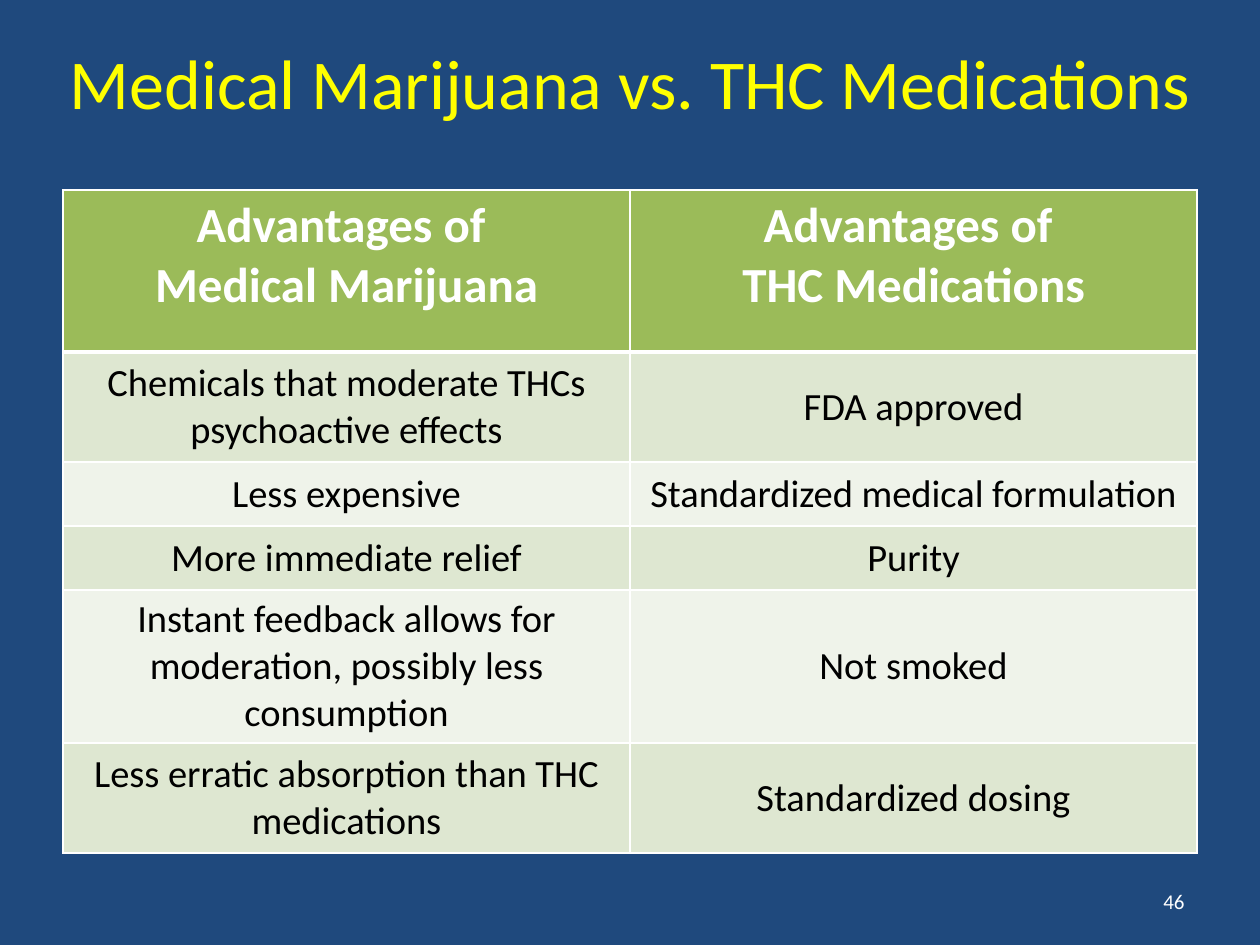
from dataclasses import dataclass

from lxml.etree import SubElement
from pptx import Presentation
from pptx.dml.color import RGBColor
from pptx.enum.text import MSO_ANCHOR, PP_ALIGN
from pptx.oxml.ns import qn
from pptx.slide import Slide
from pptx.table import Table, _Cell
from pptx.text.text import TextFrame
from pptx.util import Emu, Pt

PX_PER_INCH = 126
FONT = "Calibri"

NAVY = RGBColor(0x1F, 0x49, 0x7D)
YELLOW = RGBColor(0xFF, 0xFF, 0x00)
WHITE = RGBColor(0xFF, 0xFF, 0xFF)
BLACK = RGBColor(0x00, 0x00, 0x00)
GREEN = RGBColor(0x9B, 0xBB, 0x59)
BAND_DARK = RGBColor(0xDE, 0xE7, 0xD1)
BAND_LIGHT = RGBColor(0xEF, 0xF3, 0xEA)


@dataclass(frozen=True)
class TextStyle:
    size: int
    color: RGBColor
    align: PP_ALIGN = PP_ALIGN.CENTER
    anchor: MSO_ANCHOR = MSO_ANCHOR.MIDDLE
    bold: bool = False


@dataclass(frozen=True)
class Label:
    text: str
    left: int
    top: int
    width: int
    height: int
    style: TextStyle


@dataclass(frozen=True)
class Row:
    height: int
    marijuana: str
    medication: str


HEADER_STYLE = TextStyle(28, WHITE, anchor=MSO_ANCHOR.TOP, bold=True)
BODY_STYLE = TextStyle(22, BLACK)

LABELS = [
    Label("Medical Marijuana vs. THC Medications", 0, 3, 1260, 157,
          TextStyle(40, YELLOW)),
    Label("46", 903, 876, 294, 50, TextStyle(12, WHITE, PP_ALIGN.RIGHT)),
]

ROWS = [
    Row(162, "Advantages of \nMedical Marijuana", "Advantages of \nTHC Medications"),
    Row(110, "Chemicals that moderate THCs psychoactive effects", "FDA approved"),
    Row(64, "Less expensive", "Standardized medical formulation"),
    Row(64, "More immediate relief", "Purity"),
    Row(153, "Instant feedback allows for moderation, possibly less consumption",
        "Not smoked"),
    Row(110, "Less erratic absorption than THC medications", "Standardized dosing"),
]


def px(length: int) -> Emu:
    return Emu(round(length * 914400 / PX_PER_INCH))


def write_text(frame: TextFrame, text: str, style: TextStyle) -> None:
    frame.text = text
    for paragraph in frame.paragraphs:
        paragraph.alignment = style.align
        paragraph.font.name = FONT
        paragraph.font.size = Pt(style.size)
        paragraph.font.bold = style.bold
        paragraph.font.color.rgb = style.color


def add_label(page: Slide, label: Label) -> None:
    box = page.shapes.add_textbox(
        px(label.left), px(label.top), px(label.width), px(label.height))
    frame = box.text_frame
    frame.word_wrap = True
    frame.vertical_anchor = label.style.anchor
    write_text(frame, label.text, label.style)


def set_borders(cell: _Cell, top: int, bottom: int) -> None:
    """Draw white borders, 1 pt at the sides; must precede the cell's fill."""
    properties = cell._tc.get_or_add_tcPr()
    for side, width in (("L", 1), ("R", 1), ("T", top), ("B", bottom)):
        line = SubElement(properties, qn(f"a:ln{side}"), w=str(Pt(width)))
        fill = SubElement(line, qn("a:solidFill"))
        SubElement(fill, qn("a:srgbClr"), val=str(WHITE))


def fill_row(table: Table, index: int, row: Row) -> None:
    is_header = index == 0
    style = HEADER_STYLE if is_header else BODY_STYLE
    band = BAND_DARK if index % 2 else BAND_LIGHT
    table.rows[index].height = px(row.height)
    for column, text in enumerate((row.marijuana, row.medication)):
        cell = table.cell(index, column)
        set_borders(cell, top=3 if index == 1 else 1, bottom=3 if is_header else 1)
        cell.fill.solid()
        cell.fill.fore_color.rgb = GREEN if is_header else band
        cell.vertical_anchor = style.anchor
        write_text(cell.text_frame, text, style)


def add_comparison(page: Slide, rows: list[Row]) -> None:
    height = sum(row.height for row in rows)
    frame = page.shapes.add_table(
        len(rows), 2, px(63), px(190), px(1134), px(height))
    for index, row in enumerate(rows):
        fill_row(frame.table, index, row)


def main() -> None:
    deck = Presentation()
    deck.slide_width, deck.slide_height = px(1260), px(945)
    page = deck.slides.add_slide(deck.slide_layouts[6])
    page.background.fill.solid()
    page.background.fill.fore_color.rgb = NAVY
    for label in LABELS:
        add_label(page, label)
    add_comparison(page, ROWS)
    deck.save("out.pptx")


if __name__ == "__main__":
    main()
